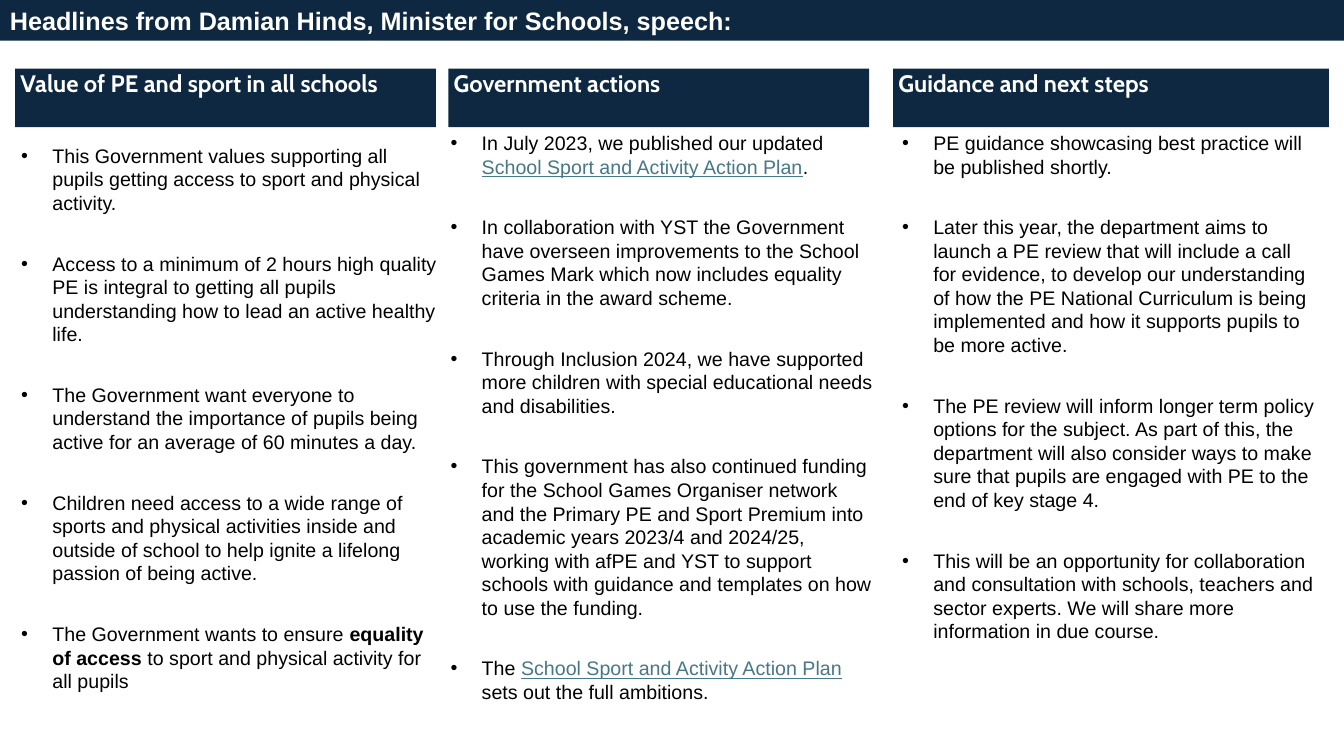
from lxml import etree
from pptx import Presentation
from pptx.dml.color import RGBColor
from pptx.enum.shapes import MSO_SHAPE
from pptx.enum.text import MSO_ANCHOR, PP_ALIGN
from pptx.oxml.ns import qn
from pptx.util import Pt

RECTANGLE = MSO_SHAPE.RECTANGLE
TOP, MIDDLE = MSO_ANCHOR.TOP, MSO_ANCHOR.MIDDLE
LEFT = PP_ALIGN.LEFT

COLOURS = {"navy": "0E2841", "white": "FFFFFF", "text": "000000", "link": "467886"}
BODY_SIZE = 14
BODY_HEIGHT = 420
LINE_PITCH = 1.2 * BODY_SIZE
BULLET_GAP = LINE_PITCH + 2 * 0.35 * BODY_SIZE
BULLET_INDENT = 22.3
ACTION_PLAN = ("School Sport and Activity Action Plan", "link")

COLUMNS = [
    {
        "heading": "Value of PE and sport in all schools",
        "bar": (10.8, 300.6),
        "body": (15.1, 102.6, 301),
        "points": [
            [("This Government values supporting all pupils getting access to sport and physical activity.", "plain")],
            [("Access to a minimum of 2 hours high quality PE is integral to getting all pupils "
              "understanding how to lead an active healthy life.", "plain")],
            [("The Government want everyone to understand the importance of pupils being active "
              "for an average of 60 minutes a day.", "plain")],
            [("Children need access to a wide range of sports and physical activities inside and "
              "outside of school to help ignite a lifelong passion of being active.", "plain")],
            [("The Government wants to ensure ", "plain"), ("equality of access", "bold"),
             (" to sport and physical activity for all pupils", "plain")],
        ],
    },
    {
        "heading": "Government actions",
        "bar": (320.2, 300.6),
        "body": (321.8, 93.5, 303.8),
        "points": [
            [("In July 2023, we published our updated ", "plain"), ACTION_PLAN, (".", "plain")],
            [("In collaboration with YST the Government have overseen improvements to the School "
              "Games Mark which now includes equality criteria in the award scheme.", "plain")],
            [("Through Inclusion 2024, we have supported more children with special educational "
              "needs and disabilities.", "plain")],
            [("This government has also continued funding for the School Games Organiser network "
              "and the Primary PE and Sport Premium into academic years 2023/4 and 2024/25, "
              "working with afPE and YST to support schools with guidance and templates on how "
              "to use the funding.", "plain")],
            [("The ", "plain"), ACTION_PLAN, (" sets out the full ambitions.", "plain")],
        ],
    },
    {
        "heading": "Guidance and next steps",
        "bar": (638, 311.2),
        "body": (644.4, 93.5, 297.4),
        "points": [
            [("PE guidance showcasing best practice will be published shortly.", "plain")],
            [("Later this year, the department aims to launch a PE review that will include a "
              "call for evidence, to develop our understanding of how the PE National Curriculum "
              "is being implemented and how it supports pupils to be more active.", "plain")],
            [("The PE review will inform longer term policy options for the subject. As part of "
              "this, the department will also consider ways to make sure that pupils are engaged "
              "with PE to the end of key stage 4.", "plain")],
            [("This will be an opportunity for collaboration and consultation with schools, "
              "teachers and sector experts. We will share more information in due course.", "plain")],
        ],
    },
]


def add_run(paragraph, text, font_name, size, colour, bold=False):
    run = paragraph.add_run()
    run.text = text
    run.font.name = font_name
    run.font.size = Pt(size)
    run.font.bold = bold
    run.font.color.rgb = RGBColor.from_string(COLOURS[colour])
    return run


def add_bar(left, top, width, height, text, font_name, size, anchor, insets):
    bar = slide.shapes.add_shape(RECTANGLE, Pt(left), Pt(top), Pt(width), Pt(height))
    bar.shadow.inherit = False
    bar.fill.solid()
    bar.fill.fore_color.rgb = RGBColor.from_string(COLOURS["navy"])
    bar.line.fill.background()
    frame = bar.text_frame
    frame.word_wrap = True
    frame.vertical_anchor = anchor
    frame.margin_left, frame.margin_top = Pt(insets[0]), Pt(insets[1])
    frame.margin_right, frame.margin_bottom = Pt(insets[0]), Pt(insets[1])
    frame.paragraphs[0].alignment = LEFT
    add_run(frame.paragraphs[0], text, font_name, size, "white", True)


presentation = Presentation()
presentation.slide_width = Pt(960)
presentation.slide_height = Pt(540)
slide = presentation.slides.add_slide(presentation.slide_layouts[6])

for column in COLUMNS:
    bar_left, bar_width = column["bar"]
    add_bar(bar_left, 49, bar_width, 41.8, column["heading"], "Cabin", 17, TOP, (3.8, 0))

    left, top, width = column["body"]
    body = slide.shapes.add_textbox(Pt(left), Pt(top), Pt(width), Pt(BODY_HEIGHT)).text_frame
    body.word_wrap = True
    body.margin_left = body.margin_top = body.margin_right = body.margin_bottom = 0
    for index, point in enumerate(column["points"]):
        paragraph = body.add_paragraph() if index else body.paragraphs[0]
        paragraph.line_spacing = Pt(LINE_PITCH)
        paragraph.space_after = Pt(BULLET_GAP)
        properties = paragraph._p.get_or_add_pPr()
        properties.set("marL", str(Pt(BULLET_INDENT)))
        properties.set("indent", str(-Pt(BULLET_INDENT)))
        etree.SubElement(properties, qn("a:buFont")).set("typeface", "Arial")
        etree.SubElement(properties, qn("a:buChar")).set("char", "•")
        for text, style in point:
            colour = "link" if style == "link" else "text"
            run = add_run(paragraph, text, "Arial", BODY_SIZE, colour, style == "bold")
            if style == "link":
                run.font.underline = True

add_bar(0, 0, 960, 29, "Headlines from Damian Hinds, Minister for Schools, speech:",
        "Arial", 18, MIDDLE, (7.2, 3.6))

presentation.save("out.pptx")
